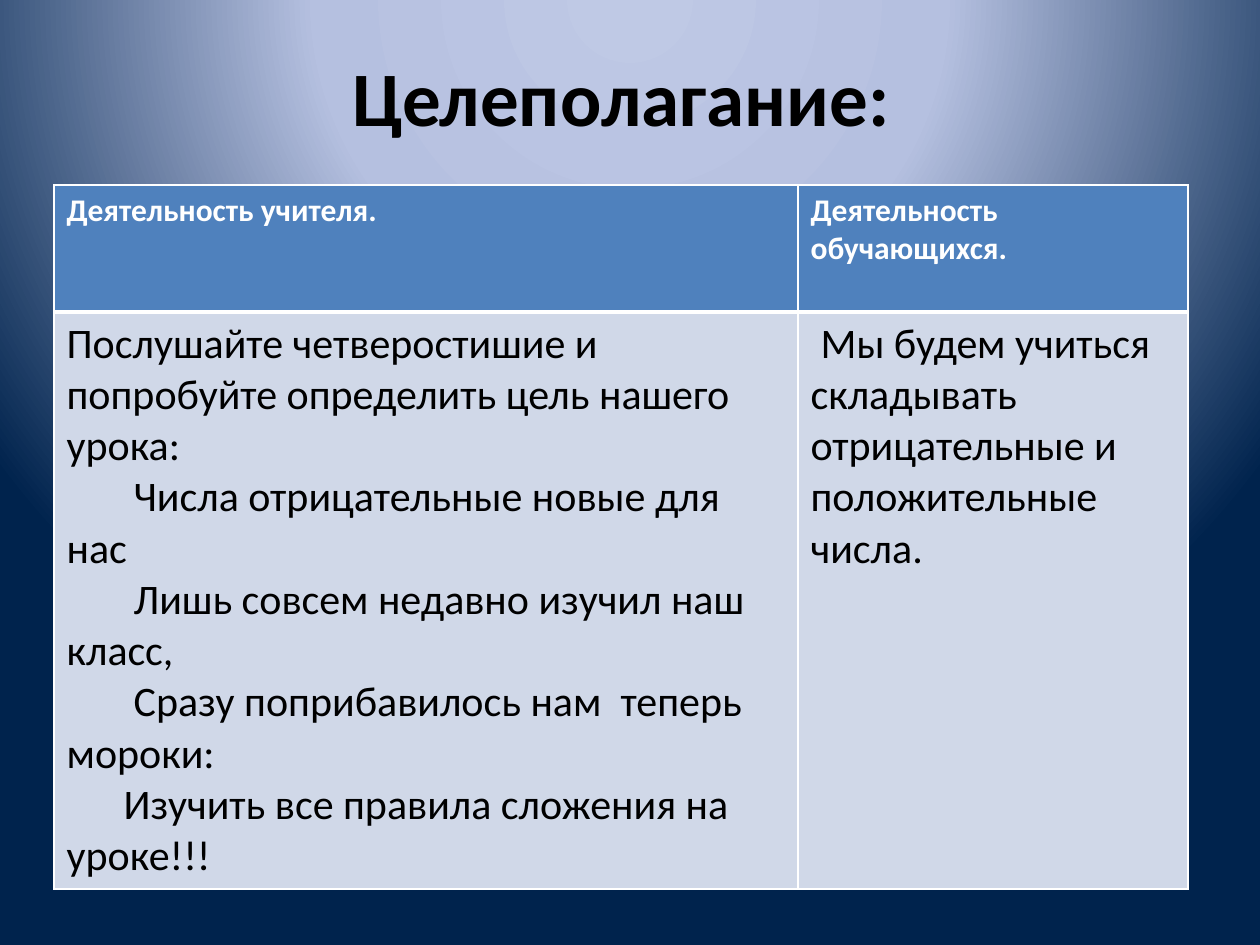
from pptx import Presentation
from pptx.dml.color import RGBColor as Rgb
from pptx.enum.text import MSO_ANCHOR as Anchor, PP_ALIGN as Align
from pptx.oxml import parse_xml
from pptx.oxml.ns import nsdecls, qn
from pptx.util import Pt

PX = 914400 / 126
NS = nsdecls("a")
HEADS = ["Деятельность учителя.", "Деятельность обучающихся."]
TASK = [
    ("Послушайте четверостишие и попробуйте определить цель нашего урока:", 0),
    ("Числа отрицательные новые для нас", 67),
    ("Лишь совсем недавно изучил наш класс,", 67),
    ("Сразу поприбавилось нам  теперь мороки:", 67),
    ("Изучить все правила сложения на уроке!!!", 57),
]
GOAL = [("Мы будем учиться складывать отрицательные и положительные числа.", 10)]
STOPS = [(0, "BFC9E5"), (40, "B5C0E0"), (100, "00234D")]


def px(num):
    """Turn pixels into EMU."""
    return round(num * PX)


def tint(code):
    """Turn a hex string into a colour."""
    return Rgb.from_string(code)


def write(para, text, size=24, color="000000", bold=False, align=Align.LEFT, indent=0):
    """Put formatted text into a paragraph."""
    para.alignment = align
    if indent:
        props = para._p.get_or_add_pPr()
        props.set("marL", "0")
        props.set("indent", str(px(indent)))
    run = para.add_run()
    run.text = text
    font = run.font
    font.name, font.size, font.bold = "Calibri", Pt(size), bold
    font.color.rgb = tint(color)


def paint(slide):
    """Give the slide a radial gradient background."""
    slide.background.fill.solid()
    base = slide.element.find(".//" + qn("p:bgPr"))
    marks = "".join(
        f'<a:gs pos="{pos * 1000}"><a:srgbClr val="{code}"/></a:gs>'
        for pos, code in STOPS
    )
    grad = parse_xml(
        f'<a:gradFill {NS} rotWithShape="1"><a:gsLst>{marks}</a:gsLst>'
        '<a:path path="circle"><a:fillToRect l="50000" t="-80000" r="50000" b="180000"/>'
        "</a:path></a:gradFill>"
    )
    base.replace(base.find(qn("a:solidFill")), grad)


def title(slide, text):
    """Add the heading."""
    frame = slide.shapes.add_textbox(px(63), px(38), px(1134), px(157)).text_frame
    frame.word_wrap = True
    frame.vertical_anchor = Anchor.TOP
    frame.margin_top = px(11)
    write(frame.paragraphs[0], text, size=44, bold=True, align=Align.CENTER)


def border(cell, top, low):
    """Draw white lines around a cell."""
    props = cell._tc.get_or_add_tcPr()
    for spot, (side, wide) in enumerate(zip("LRTB", (1, 1, top, low))):
        line = parse_xml(
            f'<a:ln{side} {NS} w="{Pt(wide)}"><a:solidFill>'
            f'<a:srgbClr val="FFFFFF"/></a:solidFill></a:ln{side}>'
        )
        props.insert(spot, line)


def fill(cell, items, back, top=1, low=1, **style):
    """Fill a cell with paragraphs, a colour and borders."""
    cell.fill.solid()
    cell.fill.fore_color.rgb = tint(back)
    frame = cell.text_frame
    for num, (text, indent) in enumerate(items):
        para = frame.add_paragraph() if num else frame.paragraphs[0]
        write(para, text, indent=indent, **style)
    border(cell, top, low)


def grid(slide):
    """Add the table of teacher and pupil activity."""
    shape = slide.shapes.add_table(2, 2, px(54), px(185), px(1134), px(704))
    table = shape.table
    table.first_row = table.horz_banding = False
    for col, wide in zip(table.columns, (744, 390)):
        col.width = px(wide)
    for row, high in zip(table.rows, (127, 577)):
        row.height = px(high)
    for num, (head, body) in enumerate(zip(HEADS, (TASK, GOAL))):
        fill(table.cell(0, num), [(head, 0)], "4F81BD", low=3,
             size=18, color="FFFFFF", bold=True)
        fill(table.cell(1, num), body, "D0D8E8", top=3)


def main():
    """Build and save the slide."""
    deck = Presentation()
    deck.slide_width, deck.slide_height = px(1260), px(945)
    slide = deck.slides.add_slide(deck.slide_layouts[6])
    paint(slide)
    title(slide, "Целеполагание: ")
    grid(slide)
    deck.save("out.pptx")


if __name__ == "__main__":
    main()
